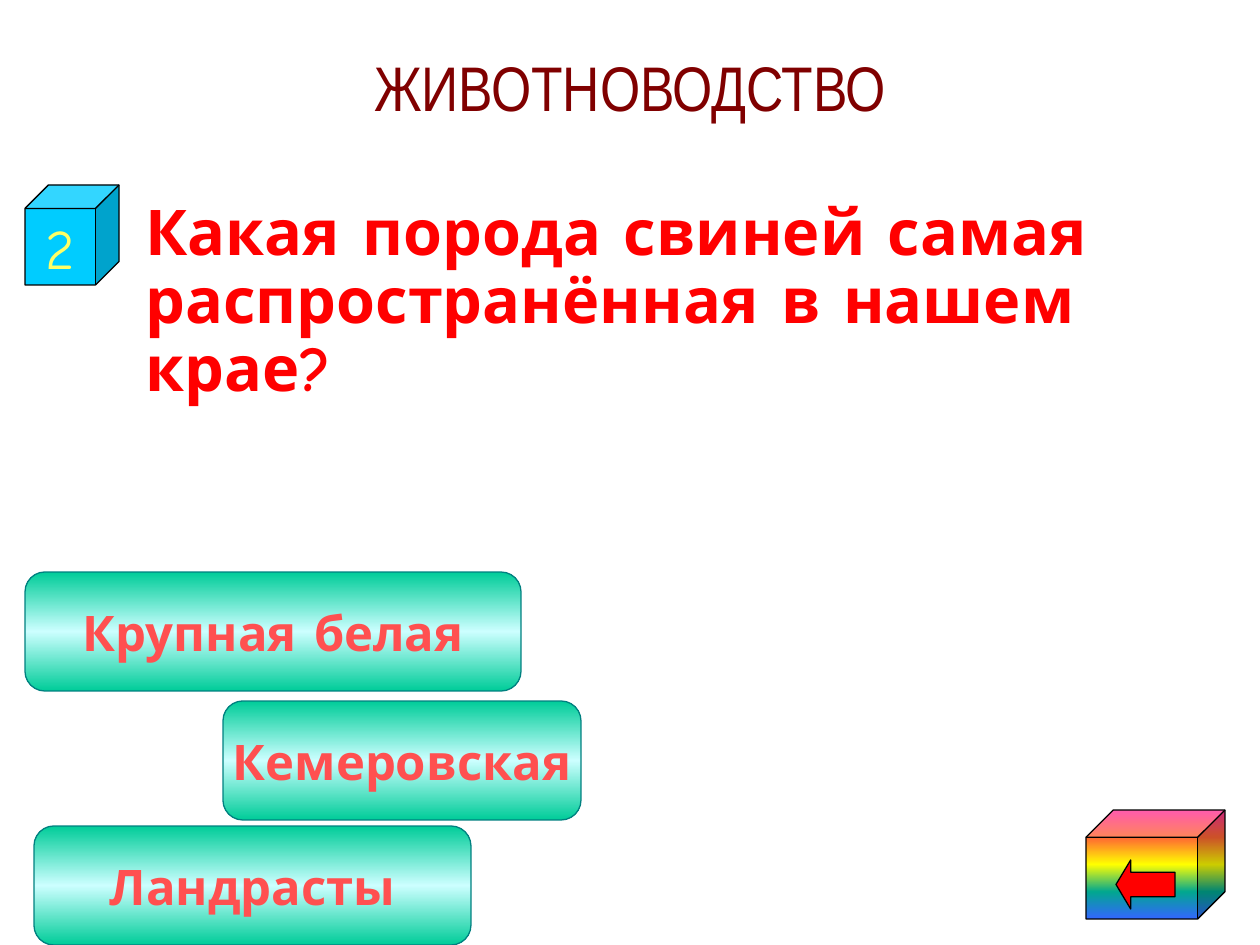
from lxml.etree import SubElement
from pptx import Presentation
from pptx.dml.color import RGBColor
from pptx.enum.shapes import MSO_SHAPE as SHAPE
from pptx.enum.text import MSO_ANCHOR as ANCHOR, PP_ALIGN as ALIGN
from pptx.oxml.ns import qn
from pptx.util import Pt

PX = 914400 / 126  # EMU in one px
FONT = "Comic Neue"
MINT = [(0, "00CC99"), (50, "CCFFFF"), (100, "00CC99")]
RAINBOW = [(0, "FF3399"), (25, "FF6633"), (50, "FFFF00"),
           (75, "01A78F"), (100, "3366FF")]


def px(n):
    return round(n * PX)


def rgb(value):
    return RGBColor.from_string(value)


def place(s, box):
    s.left, s.top, s.width, s.height = map(px, box)


def write(s, text, size, color, font=FONT, bold=False, align=ALIGN.CENTER,
          anchor=ANCHOR.MIDDLE, wrap=False, spacing=None):
    tf = s.text_frame
    tf.word_wrap, tf.vertical_anchor = wrap, anchor
    p = tf.paragraphs[0]
    p.alignment, p.line_spacing = align, spacing
    r = p.add_run()
    r.text = text
    r.font.name, r.font.size, r.font.bold = font, Pt(size), bold
    r.font.color.rgb = rgb(color)
    return p


def paint(s, fill):
    """Fill with one colour, or with (percent, colour) stops from top down."""
    if isinstance(fill, str):
        s.fill.solid()
        s.fill.fore_color.rgb = rgb(fill)
        return
    s.fill.gradient()
    s.fill.gradient_angle = 270
    stops = s.element.spPr.find(".//" + qn("a:gsLst"))
    for stop in list(stops):
        stops.remove(stop)
    for percent, color in fill:
        stop = SubElement(stops, qn("a:gs"), pos=str(percent * 1000))
        SubElement(stop, qn("a:srgbClr"), val=color)


def add_shape(shapes, kind, box, fill, line="000000"):
    s = shapes.add_shape(kind, *map(px, box))
    s.shadow.inherit = False
    paint(s, fill)
    s.line.color.rgb = rgb(line)
    s.line.width = Pt(0.75)
    return s


def add_title(slide, box):
    title = slide.shapes.title
    place(title, box)
    write(title, "ЖИВОТНОВОДСТВО", 36, "800000", font="Arial Narrow",
          anchor=ANCHOR.TOP)


def add_question(slide, box):
    x, y, w, h = box
    # Question text, indented past the number
    body = slide.placeholders[1]
    place(body, (x + 60, y + 10, w - 60, h - 10))
    p = write(body, "Какая порода свиней самая распространённая в нашем крае?",
              36, "FF0000", bold=True, align=ALIGN.LEFT, anchor=ANCHOR.TOP,
              wrap=True, spacing=0.9)
    p.space_before = Pt(0)
    pPr = p._p.get_or_add_pPr()
    pPr.set("marL", str(px(48)))
    pPr.set("indent", "0")
    SubElement(pPr, qn("a:buNone"))
    # Number cube
    cube = add_shape(slide.shapes, SHAPE.CUBE, (x, y, 94, 100), "00CCFF")
    write(cube, "2", 32, "FFFF66")


def add_answers(slide, box):
    x, y, _, h = box
    answers = [("Крупная белая", 0, 0, 496), ("Кемеровская", 198, 129, 358),
               ("Ландрасты", 9, 254, 437)]
    for text, dx, dy, w in answers:
        s = add_shape(slide.shapes, SHAPE.ROUNDED_RECTANGLE,
                      (x + dx, y + dy, w, h - 254), MINT, "008080")
        write(s, text, 28, "FF5050", bold=True)


def add_back_button(slide, box):
    x, y, _, _ = box
    group = slide.shapes.add_group_shape()
    add_shape(group.shapes, SHAPE.CUBE, box, RAINBOW)
    arrow = add_shape(group.shapes, SHAPE.LEFT_ARROW,
                      (x + 30, y + 50, 59, 49), "FF0000")
    arrow.adjustments[1] = 0.3


def main():
    prs = Presentation()
    prs.slide_width, prs.slide_height = px(1260), px(945)
    slide = prs.slides.add_slide(prs.slide_layouts[1])
    add_title(slide, (63, 42, 1134, 153))
    add_question(slide, (25, 185, 1211, 218))
    add_back_button(slide, (1086, 810, 139, 109))
    add_answers(slide, (25, 572, 556, 373))
    prs.save("out.pptx")


if __name__ == "__main__":
    main()
